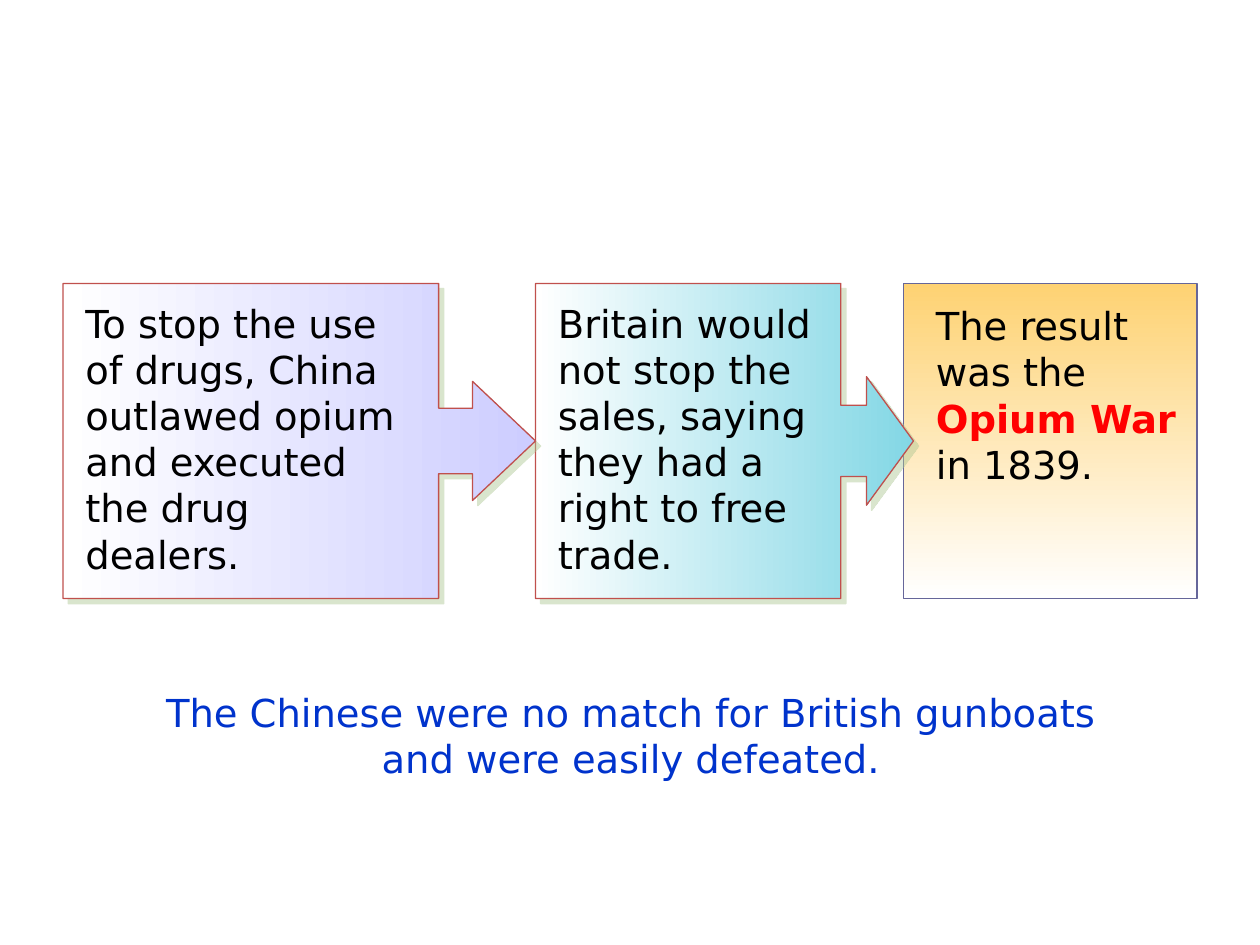
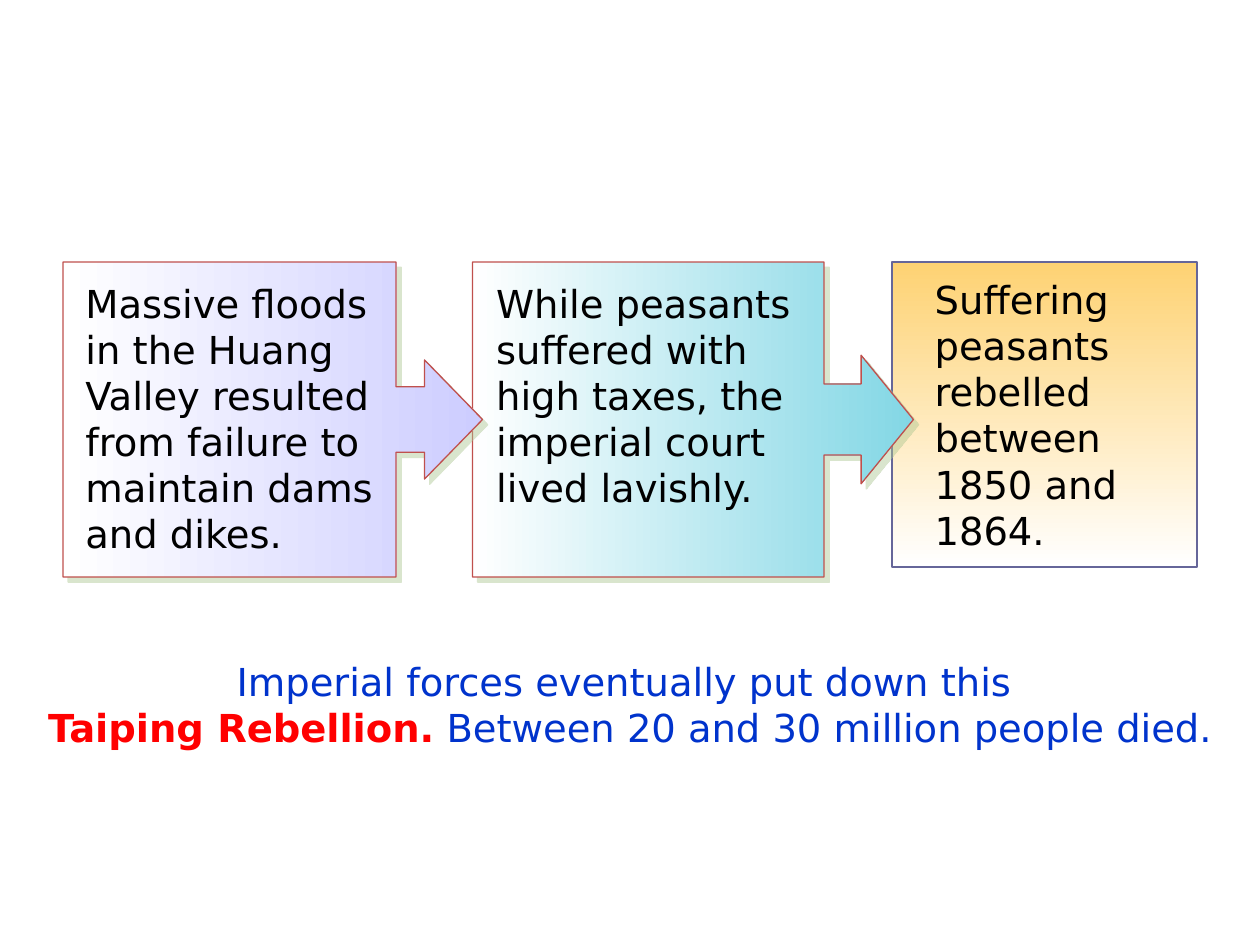
from lxml.etree import SubElement
from pptx import Presentation
from pptx.dml.color import RGBColor
from pptx.enum.shapes import MSO_SHAPE
from pptx.enum.text import MSO_AUTO_SIZE, PP_ALIGN
from pptx.oxml.ns import qn
from pptx.util import Inches, Pt

FONT = "DejaVu Sans"
BLACK = RGBColor(0x00, 0x00, 0x00)
WHITE = RGBColor(0xFF, 0xFF, 0xFF)
RED = RGBColor(0xFF, 0x00, 0x00)
BLUE = RGBColor(0x00, 0x33, 0xCC)
LILAC = RGBColor(0xCD, 0xCD, 0xFF)
AQUA = RGBColor(0x83, 0xD7, 0xE5)
GOLD = RGBColor(0xFE, 0xD2, 0x73)
BRICK = RGBColor(0xC0, 0x50, 0x4D)
SLATE = RGBColor(0x66, 0x66, 0x99)
SHADOW = RGBColor(0xAD, 0xC7, 0x93)

# Boxes are (left, top, width, height) in inches; text boxes are relative to their panel.
OPIUM_WAR = {
    "result": ((7.17, 2.25, 2.33, 2.5), (0.16, 0.1, 2.17, 1.57),
               "The result was the Opium War in 1839."),
    "callouts": [
        (AQUA, (4.25, 2.25, 3, 2.5), (0.226, 0.204, 0.149, 0.808), (0.08, 0.08, 2.34, 2.3),
         "Britain would not stop the sales, saying they had a right to free trade."),
        (LILAC, (0.5, 2.25, 3.75, 2.5), (0.208, 0.189, 0.2, 0.795), (0.08, 0.08, 2.67, 2.3),
         "To stop the use of drugs, China outlawed opium and executed the drug dealers."),
    ],
    "caption": ((0.92, 5.42, 8.17, 0.83),
                "The Chinese were no match for British gunboats and were easily defeated."),
    "key_term": "Opium War",
}
TAIPING_REBELLION = {
    "result": ((7.08, 2.08, 2.42, 2.42), (0.24, 0.06, 2.1, 2.3),
               "Suffering peasants rebelled between 1850 and 1864."),
    "callouts": [
        (AQUA, (3.75, 2.08, 3.5, 2.5), (0.226, 0.204, 0.166, 0.797), (0.09, 0.09, 2.87, 1.93),
         "While peasants suffered with high taxes, the imperial court lived lavishly."),
        (LILAC, (0.5, 2.08, 3.33, 2.5), (0.208, 0.189, 0.184, 0.794), (0.08, 0.09, 2.58, 2.3),
         "Massive floods in the Huang Valley resulted from failure to maintain dams and dikes."),
    ],
    "caption": ((0, 5.17, 10, 0.83),
                "Imperial forces eventually put down this \n"
                "Taiping Rebellion. Between 20 and 30 million people died."),
    "key_term": "Taiping Rebellion.",
}


def inches(box):
    return [Inches(length) for length in box]


def within(panel, inner):
    """Turn a box relative to a panel into a box on the page."""
    left, top, width, height = inner
    return panel[0] + left, panel[1] + top, width, height


def add_span(para, text, color, bold=False):
    span = para.add_run()
    span.text = text
    span.font.name = FONT
    span.font.size = Pt(22)
    span.font.color.rgb = color
    span.font.bold = bold


def add_text(page, box, text, key_term, color=BLACK, align=PP_ALIGN.LEFT):
    """Write text with the key term in bold red; a newline is a line break."""
    frame = page.shapes.add_textbox(*inches(box)).text_frame
    frame.word_wrap = True
    frame.auto_size = MSO_AUTO_SIZE.SHAPE_TO_FIT_TEXT
    para = frame.paragraphs[0]
    para.alignment = align
    for number, line in enumerate(text.split("\n")):
        if number:
            para.add_line_break()
        before, term, after = line.partition(key_term)
        for part in filter(None, (before, term, after)):
            is_term = part == key_term
            add_span(para, part, RED if is_term else color, is_term)


def add_panel(page, kind, box, colors, angle, line_color):
    """Add a shape with a two-colour gradient and a thin outline."""
    panel = page.shapes.add_shape(kind, *inches(box))
    panel.fill.gradient()
    panel.fill.gradient_angle = angle
    for stop, color in zip(panel.fill.gradient_stops, colors):
        stop.color.rgb = color
    panel.line.color.rgb = line_color
    panel.line.width = Pt(0.75)
    panel.shadow.inherit = False
    return panel


def add_drop_shadow(shape):
    effects = shape._element.spPr.find(qn("a:effectLst"))
    shadow = SubElement(effects, qn("a:outerShdw"), blurRad="0", dist=str(Pt(4.2)),
                        dir="2700000", algn="ctr", rotWithShape="0")
    color = SubElement(shadow, qn("a:srgbClr"), val=str(SHADOW))
    SubElement(color, qn("a:alpha"), val="46000")


def add_result(page, box, text_box, text, key_term):
    add_panel(page, MSO_SHAPE.RECTANGLE, box, (GOLD, WHITE), 270, SLATE)
    add_text(page, within(box, text_box), text, key_term)


def add_callout(page, color, box, adjustments, text_box, text, key_term):
    callout = add_panel(page, MSO_SHAPE.RIGHT_ARROW_CALLOUT, box, (WHITE, color), 0, BRICK)
    for index, value in enumerate(adjustments):
        callout.adjustments[index] = value
    add_drop_shadow(callout)
    add_text(page, within(box, text_box), text, key_term)


def add_chain_page(deck, content):
    """Add a page with two causes leading to a result, and a caption below."""
    page = deck.slides.add_slide(deck.slide_layouts[6])
    key_term = content["key_term"]
    add_result(page, *content["result"], key_term)
    for callout in content["callouts"]:
        add_callout(page, *callout, key_term)
    add_text(page, *content["caption"], key_term, BLUE, PP_ALIGN.CENTER)


def main():
    deck = Presentation()
    deck.slide_width, deck.slide_height = Inches(10), Inches(7.5)
    for content in (OPIUM_WAR, TAIPING_REBELLION):
        add_chain_page(deck, content)
    deck.save("out.pptx")


if __name__ == "__main__":
    main()
